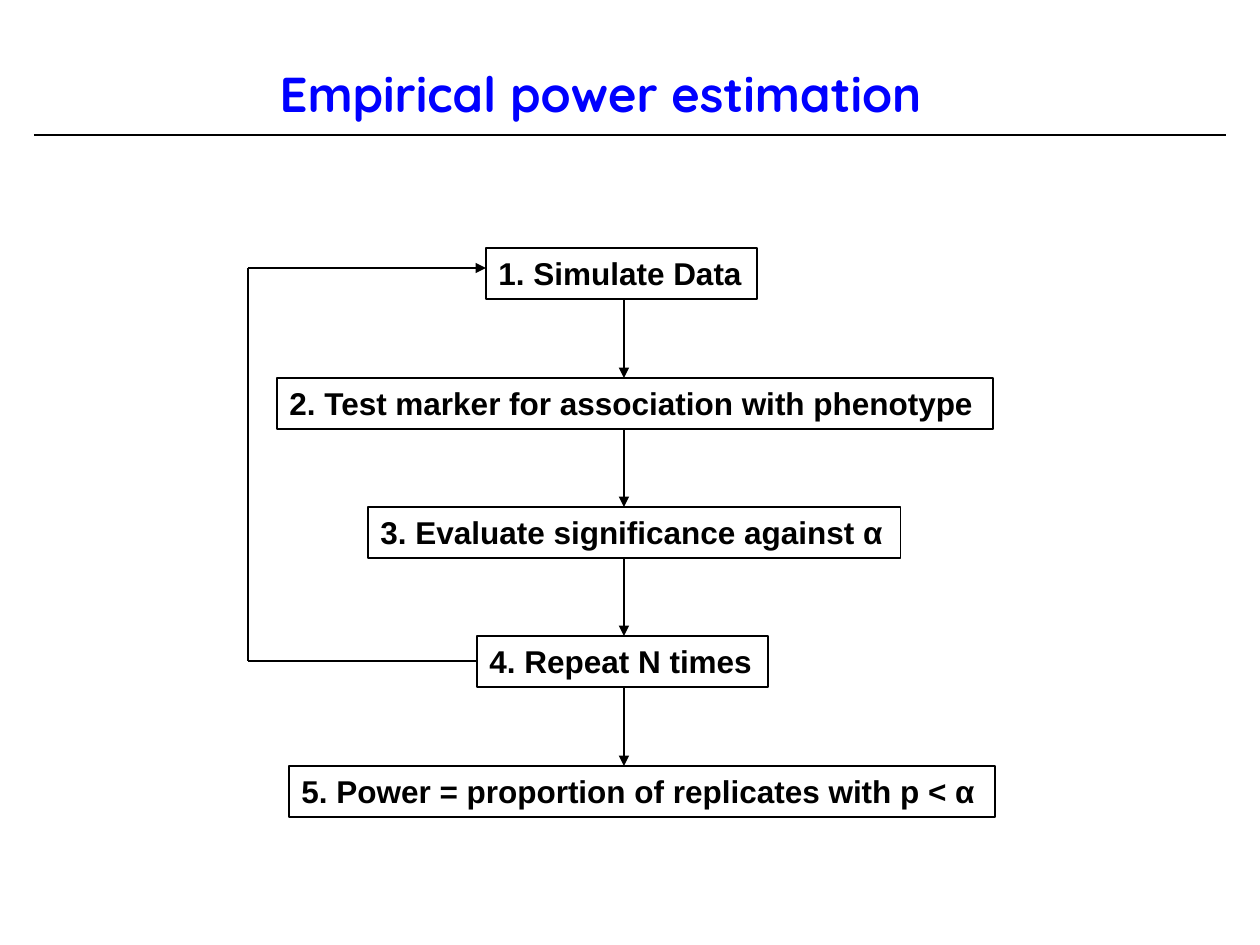
from pptx import Presentation
from pptx.dml.color import RGBColor
from pptx.enum.shapes import MSO_CONNECTOR, MSO_SHAPE
from pptx.enum.text import MSO_ANCHOR, PP_ALIGN
from pptx.oxml.ns import qn
from pptx.util import Pt
from lxml.etree import SubElement

PX = 914400 // 126
BLACK, BLUE = "000000", "0000FF"

TITLE = "Empirical power estimation"
# text, left, width
STEPS = [
    ("1. Simulate Data", 486, 271),
    ("2. Test marker for association with phenotype", 277, 716),
    ("3. Evaluate significance against α", 368, 533),
    ("4. Repeat N times", 477, 291),
    ("5. Power = proportion of replicates with p < α", 289, 706),
]
FIRST_TOP, LAST_TOP, STEP_HEIGHT = 248, 766, 51
ARROW_X = 624
LOOP_X, LOOP_TOP, LOOP_BOTTOM = 248, 268, 661


def color(value):
    return RGBColor.from_string(value)


def write(shape, text, *, size, font, fill, align=PP_ALIGN.LEFT, spacing=1.0):
    frame = shape.text_frame
    frame.word_wrap = True
    frame.vertical_anchor = MSO_ANCHOR.TOP
    para = frame.paragraphs[0]
    para.alignment = align
    para.line_spacing = spacing
    span = para.add_run()
    span.text = text
    span.font.size = Pt(size)
    span.font.name = font
    span.font.bold = True
    span.font.color.rgb = color(fill)


def add_step(page, text, left, top, width):
    box = page.shapes.add_shape(MSO_SHAPE.RECTANGLE, left * PX, top * PX,
                                width * PX, STEP_HEIGHT * PX)
    box.shadow.inherit = False
    box.fill.background()
    box.line.color.rgb = color(BLACK)
    box.line.width = Pt(0.75)
    write(box, text, size=18, font="Arial", fill=BLACK)


def add_line(page, start, end, width=1.5, arrow=False):
    points = [value * PX for value in (*start, *end)]
    line = page.shapes.add_connector(MSO_CONNECTOR.STRAIGHT, *points)
    line.line.color.rgb = color(BLACK)
    line.line.width = Pt(width)
    if arrow:
        SubElement(line.line._get_or_add_ln(), qn("a:tailEnd"), type="triangle")
    SubElement(line._element.spPr, qn("a:effectLst"))


def main():
    deck = Presentation()
    deck.slide_width, deck.slide_height = 1260 * PX, 945 * PX
    page = deck.slides.add_slide(deck.slide_layouts[6])

    title = page.shapes.add_textbox(26 * PX, 28 * PX, 1149 * PX, 91 * PX)
    write(title, TITLE, size=28, font="Quicksand", fill=BLUE,
          align=PP_ALIGN.CENTER, spacing=1.5)
    add_line(page, (34, 135), (1226, 135), width=0.75)

    pitch = (LAST_TOP - FIRST_TOP) / (len(STEPS) - 1)
    tops = [round(FIRST_TOP + index * pitch) for index in range(len(STEPS))]
    for (text, left, width), top in zip(STEPS, tops):
        add_step(page, text, left, top, width)
    for top, next_top in zip(tops, tops[1:]):
        add_line(page, (ARROW_X, top + STEP_HEIGHT), (ARROW_X, next_top), arrow=True)

    simulate_left, repeat_left = STEPS[0][1], STEPS[3][1]
    add_line(page, (LOOP_X, LOOP_BOTTOM), (repeat_left, LOOP_BOTTOM))
    add_line(page, (LOOP_X, LOOP_BOTTOM), (LOOP_X, LOOP_TOP))
    add_line(page, (LOOP_X, LOOP_TOP), (simulate_left, LOOP_TOP), arrow=True)

    deck.save("out.pptx")


if __name__ == "__main__":
    main()
